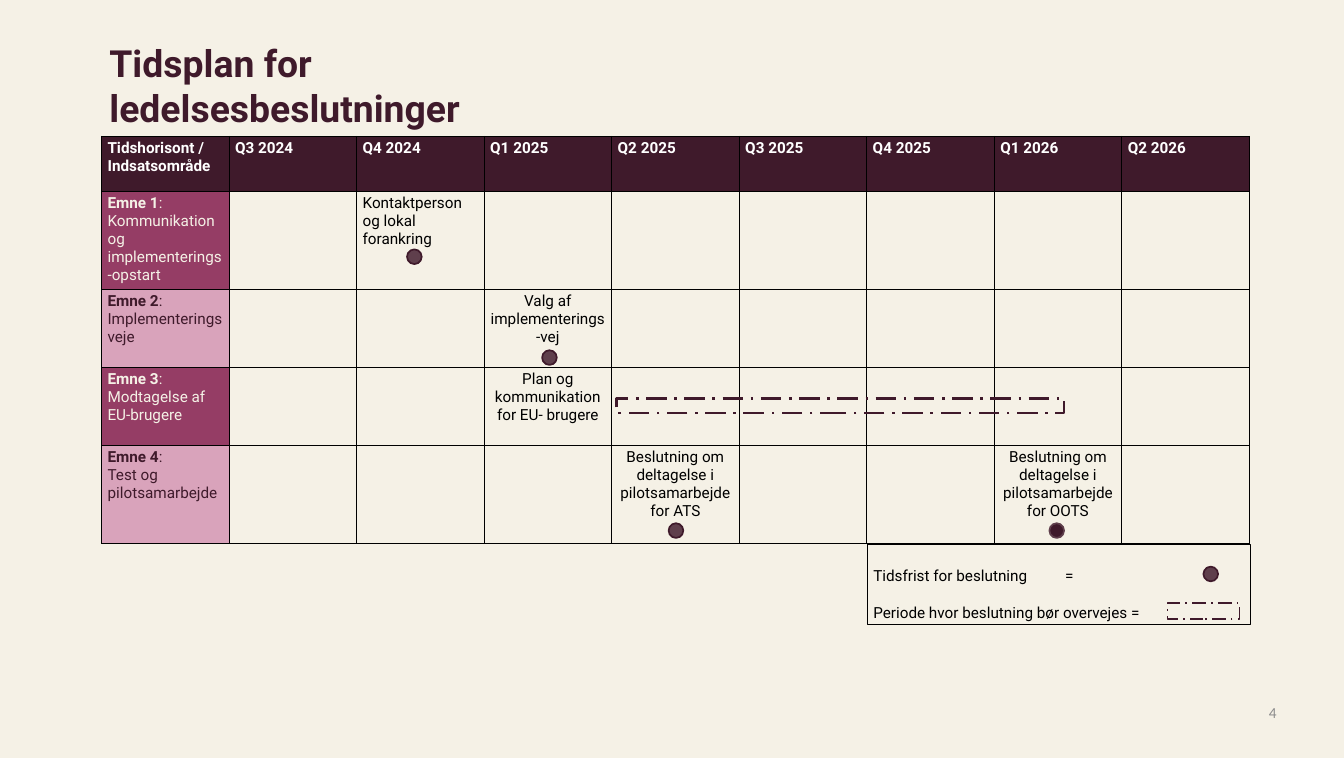
import pptx
import pptx.util
import pptx.dml.color
import pptx.enum.dml
import pptx.enum.shapes
import pptx.enum.text
import pptx.oxml
import pptx.oxml.ns

Inches = pptx.util.Inches
Pt = pptx.util.Pt
SHAPES = pptx.enum.shapes.MSO_SHAPE
ALIGN = pptx.enum.text.PP_ALIGN
ANCHOR = pptx.enum.text.MSO_ANCHOR
LONG_DASH_DOT = pptx.enum.dml.MSO_LINE.LONG_DASH_DOT

CREAM, PLUM, MAUVE = "F5F1E6", "3F1A2B", "5F3F4C"
BERRY, PINK, BLACK, WHITE, GREY = "953D65", "D9A3BB", "000000", "FFFFFF", "8C8C8C"


def color(hex_string):
    return pptx.dml.color.RGBColor.from_string(hex_string)


def add_run(paragraph, text, hex_string, bold=False, size=18, font="Roboto"):
    run = paragraph.add_run()
    run.text = text
    run.font.name = font
    run.font.size = Pt(size)
    run.font.bold = bold
    run.font.color.rgb = color(hex_string)


presentation = pptx.Presentation()
presentation.slide_width = Inches(21.99)
presentation.slide_height = Inches(12.4)
slide = presentation.slides.add_slide(presentation.slide_layouts[5])
slide.background.fill.solid()
slide.background.fill.fore_color.rgb = color(CREAM)

# Title
title = slide.shapes.title
title.left, title.top = Inches(1.69), Inches(0.61)
title.width, title.height = Inches(8.81), Inches(1.55)
title.text_frame.word_wrap = True
title.text_frame.vertical_anchor = ANCHOR.TOP
title_paragraph = title.text_frame.paragraphs[0]
title_paragraph.alignment = ALIGN.LEFT
add_run(title_paragraph, "Tidsplan for ledelsesbeslutninger", PLUM, True, 44)

# Timeline table
quarters = ["Q3 2024", "Q4 2024", "Q1 2025", "Q2 2025",
            "Q3 2025", "Q4 2025", "Q1 2026", "Q2 2026"]
topics = [
    ("Emne 1", ": Kommunikation og implementerings-opstart"),
    ("Emne 2", ": Implementeringsveje"),
    ("Emne 3", ": Modtagelse af EU-brugere"),
    ("Emne 4", ":\vTest og pilotsamarbejde"),
]
decisions = [
    (1, "Q4 2024", "Kontaktperson og lokal forankring", ALIGN.LEFT),
    (2, "Q1 2025", "Valg af implementerings-vej", ALIGN.CENTER),
    (3, "Q1 2025", "Plan og kommunikation for EU- brugere", ALIGN.CENTER),
    (4, "Q2 2025", "Beslutning om deltagelse i pilotsamarbejde for ATS", ALIGN.CENTER),
    (4, "Q1 2026", "Beslutning om deltagelse i pilotsamarbejde for OOTS", ALIGN.CENTER),
]
row_heights = [0.9, 1.6, 1.28, 1.28, 1.6]
table = slide.shapes.add_table(
    len(row_heights), len(quarters) + 1,
    Inches(1.66), Inches(2.23), Inches(18.78), Inches(sum(row_heights))).table
for row, height in zip(table.rows, row_heights):
    row.height = Inches(height)

for row_index in range(len(row_heights)):
    for column_index in range(len(quarters) + 1):
        cell = table.cell(row_index, column_index)
        properties = cell._tc.get_or_add_tcPr()
        for side in ("lnL", "lnR", "lnT", "lnB"):
            properties.append(pptx.oxml.parse_xml(
                f'<a:{side} {pptx.oxml.ns.nsdecls("a")} w="12700"><a:solidFill>'
                f'<a:srgbClr val="{BLACK}"/></a:solidFill></a:{side}>'))
        if row_index == 0:
            fill = PLUM
        elif column_index == 0:
            fill = BERRY if row_index % 2 else PINK
        else:
            fill = CREAM
        cell.fill.solid()
        cell.fill.fore_color.rgb = color(fill)

# Header row and topic column
corner = table.cell(0, 0).text_frame
add_run(corner.paragraphs[0], "Tidshorisont /", WHITE, True)
add_run(corner.add_paragraph(), "Indsatsområde", WHITE, True)
for column_index, quarter in enumerate(quarters, 1):
    add_run(table.cell(0, column_index).text_frame.paragraphs[0], quarter, WHITE, True)
for row_index, (name, description) in enumerate(topics, 1):
    paragraph = table.cell(row_index, 0).text_frame.paragraphs[0]
    text_color = CREAM if row_index % 2 else PLUM
    add_run(paragraph, name, text_color, True)
    label, *second_line = description.split("\v")
    add_run(paragraph, label, text_color)
    for text in second_line:
        paragraph.add_line_break()
        add_run(paragraph, text, text_color)

# Decisions
for row_index, quarter, text, alignment in decisions:
    cell = table.cell(row_index, quarters.index(quarter) + 1)
    paragraph = cell.text_frame.paragraphs[0]
    paragraph.alignment = alignment
    add_run(paragraph, text, BLACK)

# Legend
legend = slide.shapes.add_shape(
    SHAPES.RECTANGLE, Inches(14.19), Inches(8.9), Inches(6.26), Inches(1.31))
legend.shadow.inherit = False
legend.fill.background()
legend.line.color.rgb = color(BLACK)
legend.line.width = Pt(0.75)
legend.text_frame.word_wrap = True
legend.text_frame.vertical_anchor = ANCHOR.BOTTOM
deadline = legend.text_frame.paragraphs[0]
deadline._p.get_or_add_pPr().append(pptx.oxml.parse_xml(
    f'<a:tabLst {pptx.oxml.ns.nsdecls("a")}>'
    f'<a:tab pos="{Inches(3.14)}" algn="l"/></a:tabLst>'))
add_run(deadline, "Tidsfrist for beslutning\t=", BLACK)
period = legend.text_frame.add_paragraph()
period.space_before = Pt(21)
add_run(period, "Periode hvor beslutning bør overvejes =", BLACK)
for paragraph in (deadline, period):
    paragraph.alignment = ALIGN.LEFT

# Deadline dots, the first one in the legend
dots = [
    (19.69, 9.27, MAUVE, PLUM),
    (6.66, 4.08, MAUVE, PLUM),
    (8.87, 5.73, MAUVE, PLUM),
    (10.94, 8.56, MAUVE, PLUM),
    (17.17, 8.56, PLUM, MAUVE),
]
for left, top, fill, outline in dots:
    dot = slide.shapes.add_shape(
        SHAPES.OVAL, Inches(left), Inches(top), Inches(0.24), Inches(0.24))
    dot.shadow.inherit = False
    dot.fill.solid()
    dot.fill.fore_color.rgb = color(fill)
    dot.line.color.rgb = color(outline)
    dot.line.width = Pt(2)

# Dashed periods, the first one in the legend
for left, top, width, height, weight in [(19.1, 9.87, 1.18, 0.26, 2),
                                         (10.09, 6.52, 7.32, 0.24, 3)]:
    bar = slide.shapes.add_shape(
        SHAPES.RECTANGLE, Inches(left), Inches(top), Inches(width), Inches(height))
    bar.shadow.inherit = False
    bar.fill.background()
    bar.line.color.rgb = color(PLUM)
    bar.line.width = Pt(weight)
    bar.line.dash_style = LONG_DASH_DOT

# Page number
page_number = slide.shapes.add_textbox(
    Inches(15.83), Inches(11.5), Inches(5.06), Inches(0.62)).text_frame
page_number.word_wrap = True
page_number.margin_left = page_number.margin_right = 0
page_number.margin_top = page_number.margin_bottom = 0
page_number.paragraphs[0].alignment = ALIGN.RIGHT
add_run(page_number.paragraphs[0], "4", GREY, font="Calibri")

presentation.save("out.pptx")
